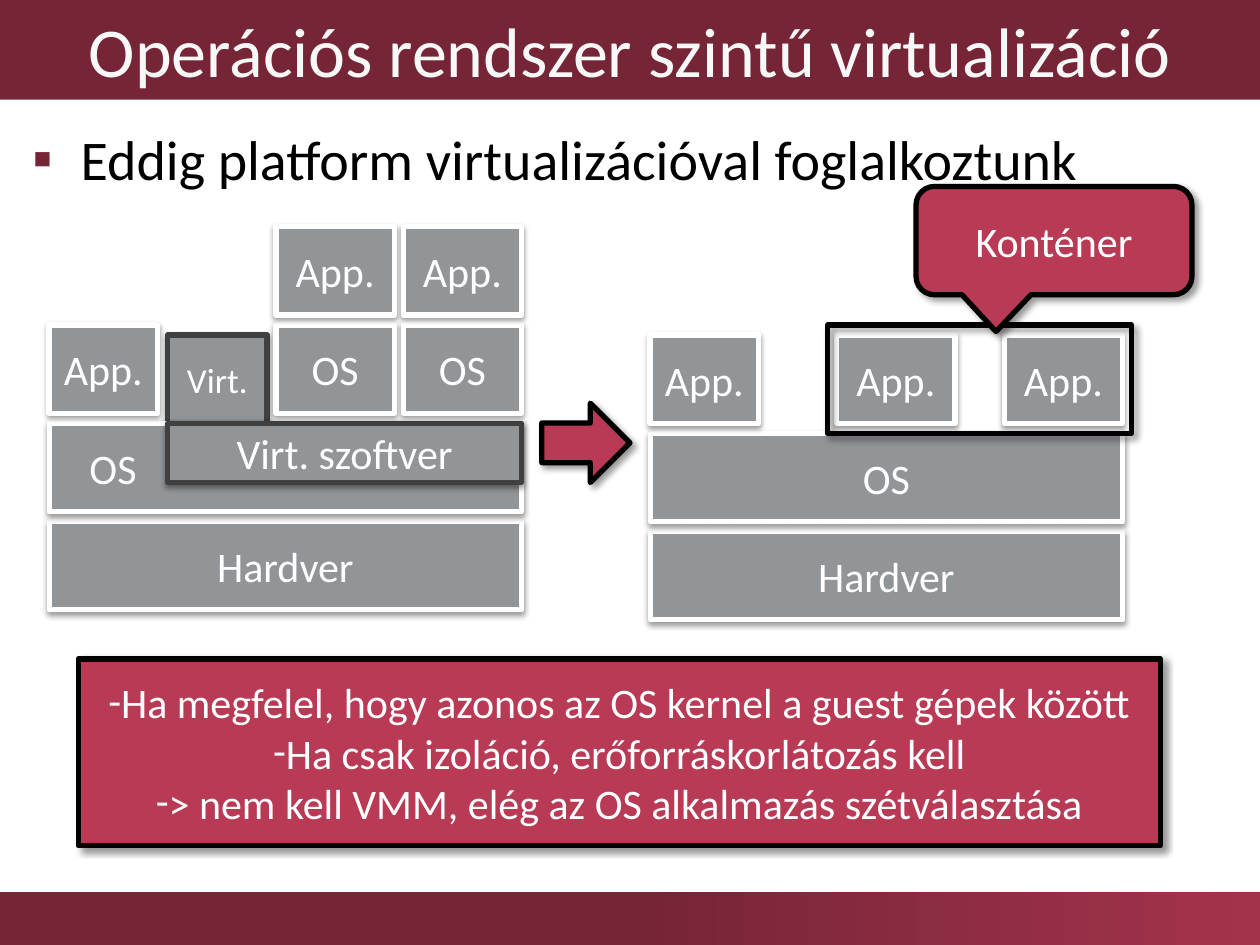
from lxml import etree
from pptx import Presentation, util as u
from pptx.dml.color import RGBColor
from pptx.enum import shapes, text
from pptx.oxml import ns

CENTER = text.PP_ALIGN.CENTER
LEFT = text.PP_ALIGN.LEFT
MAROON, RED, GRAY = "762536", "B83A55", "929598"
WHITE, BLACK, DARK = "FFFFFF", "000000", "404040"
SOFT = dict(blur=3.1, dist=1.6, angle=90, alpha=38)
STRONG = dict(blur=4, dist=3, angle=45, alpha=40)


def color(value):
    return RGBColor.from_string(value)


def apply(target, values):
    for name, value in values.items():
        setattr(target, name, value)


def add_element(parent, tag, **attributes):
    element = etree.SubElement(parent, ns.qn(tag))
    for name, value in attributes.items():
        element.set(name, str(value))
    return element


class Painter:
    font = "Calibri"

    def __init__(self, page):
        self.page = page

    def place(self, box, left, top, width, height):
        apply(box, {"left": u.Inches(left), "top": u.Inches(top),
                    "width": u.Inches(width), "height": u.Inches(height)})

    def label(self, box, lines, size, ink, align=CENTER, bullet=None,
              bullet_color=None, indent=0, anchor=text.MSO_ANCHOR.MIDDLE):
        frame = box.text_frame
        apply(frame, {"word_wrap": True, "vertical_anchor": anchor,
                      "auto_size": text.MSO_AUTO_SIZE.NONE})
        for index, line in enumerate(lines):
            para = frame.add_paragraph() if index else frame.paragraphs[0]
            apply(para, {"alignment": align, "space_before": u.Pt(0)})
            if bullet:
                properties = para._p.get_or_add_pPr()
                properties.set("marL", str(u.Inches(indent)))
                properties.set("indent", str(u.Inches(-indent)))
                if bullet_color:
                    holder = add_element(properties, "a:buClr")
                    add_element(holder, "a:srgbClr", val=bullet_color)
                add_element(properties, "a:buFont", typeface=self.font)
                add_element(properties, "a:buChar", char=bullet)
            span = para.add_run()
            span.text = line
            apply(span.font, {"name": self.font, "size": u.Pt(size)})
            span.font.color.rgb = color(ink)

    def title(self, words, *place):
        box = self.page.shapes.title
        self.place(box, *place)
        box.fill.solid()
        box.fill.fore_color.rgb = color(MAROON)
        self.label(box, [words], 40, "F8F8F8")

    def body(self, lines, *place):
        box = self.page.placeholders[1]
        self.place(box, *place)
        self.label(box, lines, 32, BLACK, LEFT, "▪", MAROON, 0.38,
                   text.MSO_ANCHOR.TOP)

    def footer(self, *place):
        box = self.page.shapes.add_shape(
            shapes.MSO_SHAPE.RECTANGLE, *map(u.Inches, place))
        box.shadow.inherit = False
        box.line.fill.background()
        box.fill.gradient()
        box.fill.gradient_angle = 0
        stops = zip(box.fill.gradient_stops, (0.5, 1), (MAROON, "A3334B"))
        for stop, position, value in stops:
            stop.position = position
            stop.color.rgb = color(value)

    def shape(self, kind, *place, fill=RED, line=BLACK, shadow=STRONG):
        box = self.page.shapes.add_shape(kind, *map(u.Inches, place))
        if fill:
            box.fill.solid()
            box.fill.fore_color.rgb = color(fill)
        else:
            box.fill.background()
        box.line.color.rgb = color(line)
        box.line.width = u.Pt(3)
        box.shadow.inherit = False
        effects = box._element.spPr.find(ns.qn("a:effectLst"))
        outer = add_element(
            effects, "a:outerShdw", blurRad=u.Pt(shadow["blur"]),
            dist=u.Pt(shadow["dist"]), dir=shadow["angle"] * 60000,
            algn="ctr", rotWithShape=0)
        tint = add_element(outer, "a:srgbClr", val=BLACK)
        add_element(tint, "a:alpha", val=shadow["alpha"] * 1000)
        return box

    def block(self, words, left, top, width, height=0.7, line=WHITE,
              size=24, align=CENTER):
        box = self.shape(shapes.MSO_SHAPE.RECTANGLE, left, top, width, height,
                         fill=GRAY, line=line, shadow=SOFT)
        self.label(box, [words], size, WHITE, align)
        return box


def main():
    deck = Presentation()
    deck.slide_width, deck.slide_height = u.Inches(10), u.Inches(7.5)
    page = deck.slides.add_slide(deck.slide_layouts[1])
    painter = Painter(page)
    kinds = shapes.MSO_SHAPE

    painter.footer(0, 7.08, 10, 0.42)
    painter.title("Operációs rendszer szintű virtualizáció", 0, 0, 10, 0.79)
    painter.body(["Eddig platform virtualizációval foglalkoztunk"],
                 0.16, 0.94, 9.69, 6.05)

    step, stack_width, app_width, guest_width = 0.78, 3.75, 0.86, 0.94
    left, top = 0.39, 1.8
    app_row, os_row, hardware_row = (top + step * row for row in (1, 2, 3))
    painter.block("Virt.", 1.33, 2.66, 0.79, line=DARK, size=20)
    painter.block("Hardver", left, hardware_row, stack_width)
    host = painter.block("OS", left, os_row, stack_width, align=LEFT)
    host.text_frame.margin_left = u.Inches(0.32)
    painter.block("Virt. szoftver", 1.33, os_row, 2.81, 0.47, line=DARK)
    painter.block("App.", left, app_row, app_width)
    for row, words in ((app_row, "OS"), (top, "App.")):
        for column in (2.19, 3.2):
            painter.block(words, column, row, guest_width)

    painter.shape(kinds.RIGHT_ARROW, 4.3, 3.2, 0.7, 0.63)

    left, top = 5.16, 2.66
    painter.block("Hardver", left, top + 2 * step, stack_width)
    painter.block("OS", left, top + step, stack_width)
    for column, width in ((left, app_width), (6.64, guest_width),
                          (7.97, guest_width)):
        painter.block("App.", column, top, width)
    painter.shape(kinds.RECTANGLE, 6.57, 2.58, 2.41, 0.86, fill=None)

    summary = painter.shape(kinds.RECTANGLE, 0.62, 5.23, 8.59, 1.48)
    painter.label(summary, [
        "Ha megfelel, hogy azonos az OS kernel a guest gépek között",
        "Ha csak izoláció, erőforráskorlátozás kell",
        "> nem kell VMM, elég az OS alkalmazás szétválasztása",
    ], 24, WHITE, bullet="-")

    callout = painter.shape(kinds.ROUNDED_RECTANGULAR_CALLOUT,
                            7.27, 1.48, 2.19, 0.86)
    for index, value in enumerate((-0.21, 0.84, 0.17)):
        callout.adjustments[index] = value
    painter.label(callout, ["Konténer"], 24, WHITE)

    deck.save("out.pptx")


if __name__ == "__main__":
    main()
